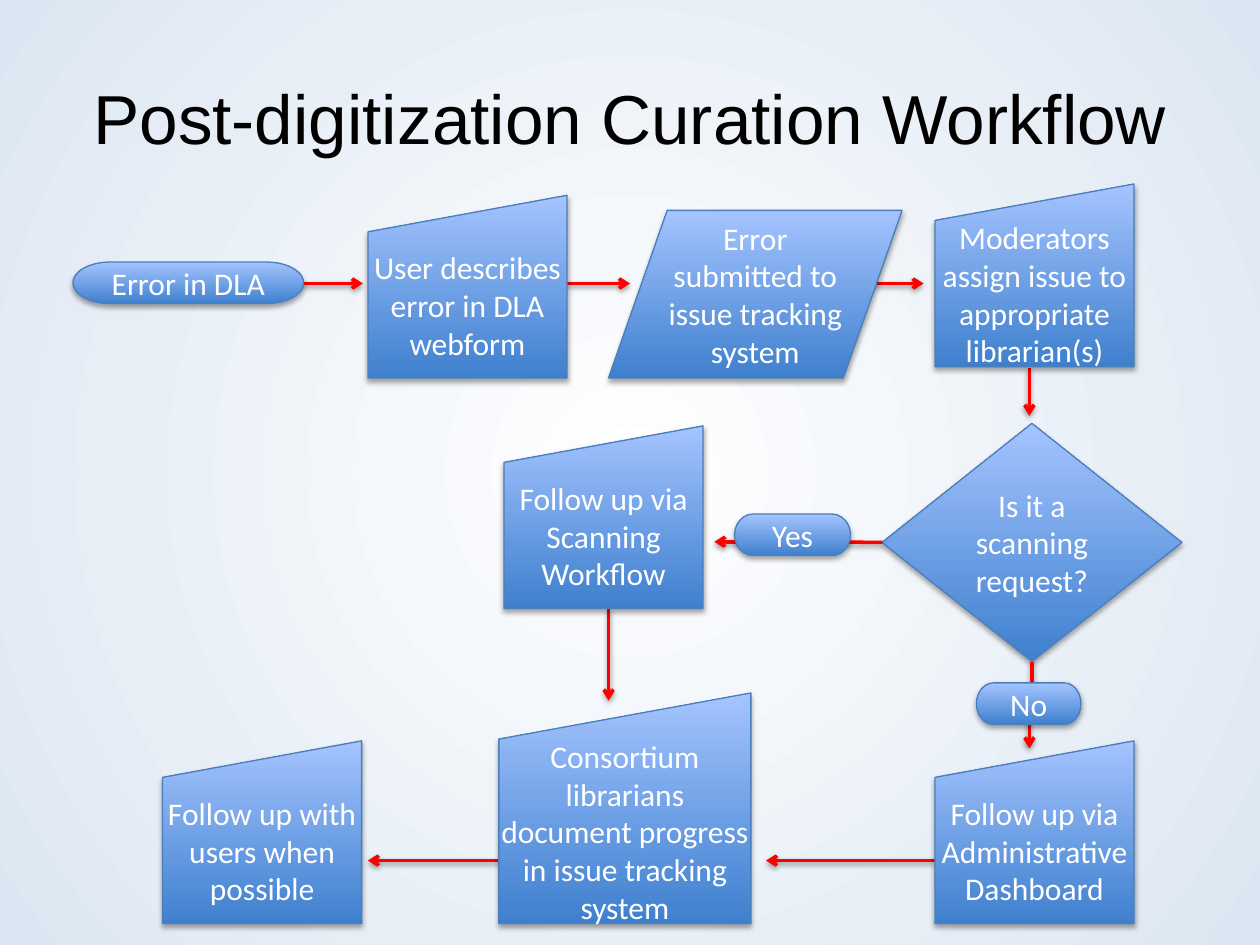
from lxml.etree import SubElement
from pptx import Presentation
from pptx.dml.color import RGBColor
from pptx.enum.shapes import MSO_CONNECTOR, MSO_SHAPE
from pptx.enum.text import MSO_ANCHOR, PP_ALIGN
from pptx.oxml.ns import qn
from pptx.util import Inches, Pt

COLORS = {
    "title": "000000",
    "text": "FFFFFF",
    "arrow": "FF0000",
    "outline": "4B7EBC",
    "node_bottom": "3F80CE",
    "node_top": "A4C4FF",
    "bg_center": "FFFFFF",
    "bg_edge": "DCE6F2",
    "shadow": "000000",
}
STEP_SIZE = (1.58, 1.45)
PILL_HEIGHT = 0.33

STEPS = [
    ("User describes error in DLA webform", 2.92, 1.55, STEP_SIZE),
    ("Moderators assign issue to appropriate librarian(s)", 7.42, 1.46, STEP_SIZE),
    ("Follow up via Administrative Dashboard", 7.42, 5.88, STEP_SIZE),
    ("Follow up via Scanning Workflow", 4, 3.38, STEP_SIZE),
    ("Consortium librarians document progress in issue tracking system",
     3.96, 5.5, (2, 1.83)),
    ("Follow up with users when possible", 1.29, 5.88, STEP_SIZE),
]
PILLS = [
    ("Error in DLA", 0.58, 2.08, 1.83),
    ("No", 7.75, 5.42, 0.83),
    ("Yes", 5.83, 4.08, 0.92),
]
ARROWS = [
    (2.38, 2.25, 2.88, 2.25),
    (4.5, 2.25, 5, 2.25),
    (6.83, 2.25, 7.33, 2.25),
    (8.17, 2.92, 8.17, 3.3),
    (6.42, 4.3, 5.67, 4.3),
    (8.17, 5.56, 8.17, 5.94),
    (4.83, 4.83, 4.83, 5.56),
    (7.42, 6.83, 6.08, 6.83),
    (4.25, 6.83, 2.92, 6.83),
]


def rgb(name):
    return RGBColor.from_string(COLORS[name])


def set_gradient(fill, start, end):
    fill.gradient()
    for stop, name, position in zip(fill.gradient_stops, (start, end), (0, 1)):
        stop.color.rgb = rgb(name)
        stop.position = position


def set_background(s):
    fill = s.background.fill
    set_gradient(fill, "bg_center", "bg_edge")
    grad = s.background._cSld.find(".//" + qn("a:gradFill"))
    grad.remove(grad.find(qn("a:lin")))
    circle = SubElement(grad, qn("a:path"), path="circle")
    SubElement(circle, qn("a:fillToRect"), l="50000", t="50000", r="50000", b="50000")


def add_shadow(sp, distance, alpha):
    effects = SubElement(sp._element.spPr, qn("a:effectLst"))
    shadow = SubElement(effects, qn("a:outerShdw"), blurRad=str(Pt(3.1)),
                        dist=str(Pt(distance)), dir="5400000", rotWithShape="0")
    color = SubElement(shadow, qn("a:srgbClr"), val=COLORS["shadow"])
    SubElement(color, qn("a:alpha"), val=str(alpha * 1000))


def add_title(s, text):
    title = s.shapes.title
    title.left, title.top = Inches(0.5), Inches(0.3)
    title.width, title.height = Inches(9), Inches(1.25)
    tf = title.text_frame
    tf.text = text
    tf.vertical_anchor = MSO_ANCHOR.MIDDLE
    p = tf.paragraphs[0]
    p.alignment = PP_ALIGN.CENTER
    p.font.name, p.font.size = "Arial", Pt(39.6)
    p.font.color.rgb = rgb("title")


def add_node(s, kind, text, left, top, width, height, side_inset=0.1):
    sp = s.shapes.add_shape(kind, Inches(left), Inches(top), Inches(width), Inches(height))
    set_gradient(sp.fill, "node_bottom", "node_top")
    sp.fill.gradient_angle = 90
    sp.line.color.rgb = rgb("outline")
    sp.line.width = Pt(0.75)
    add_shadow(sp, 1.8, 35)
    tf = sp.text_frame
    tf.word_wrap = True
    tf.vertical_anchor = MSO_ANCHOR.MIDDLE
    tf.margin_left = tf.margin_right = Inches(side_inset)
    tf.text = text
    p = tf.paragraphs[0]
    p.alignment = PP_ALIGN.CENTER
    p.font.name, p.font.size = "Calibri", Pt(18)
    p.font.color.rgb = rgb("text")
    return sp


def add_line(s, x1, y1, x2, y2, arrow=False):
    line = s.shapes.add_connector(
        MSO_CONNECTOR.STRAIGHT, Inches(x1), Inches(y1), Inches(x2), Inches(y2))
    line.line.color.rgb = rgb("arrow")
    line.line.width = Pt(2)
    if arrow:
        SubElement(line.line._get_or_add_ln(), qn("a:tailEnd"), type="arrow")
    add_shadow(line, 1.6, 38)
    return line


def main():
    prs = Presentation()
    prs.slide_width, prs.slide_height = Inches(10), Inches(7.5)
    s = prs.slides.add_slide(prs.slide_layouts[5])
    set_background(s)
    add_title(s, "Post-digitization Curation Workflow")

    decision = add_node(s, MSO_SHAPE.FLOWCHART_DECISION, "Is it a scanning request?",
                        7, 3.36, 2.38, 1.89)
    for points in ARROWS:
        add_line(s, *points, arrow=True)
    add_line(s, 6.33, 4.3, 7, 4.3).end_connect(decision, 1)
    add_line(s, 8.19, 5.25, 8.19, 5.5).begin_connect(decision, 2)

    add_node(s, MSO_SHAPE.FLOWCHART_DATA, "Error submitted to issue tracking system",
             4.83, 1.67, 2.33, 1.33, side_inset=0)
    for text, left, top, size in STEPS:
        add_node(s, MSO_SHAPE.FLOWCHART_MANUAL_INPUT, text, left, top, *size, side_inset=0)
    for text, left, top, width in PILLS:
        add_node(s, MSO_SHAPE.FLOWCHART_TERMINATOR, text, left, top, width, PILL_HEIGHT)

    prs.save("out.pptx")


if __name__ == "__main__":
    main()
